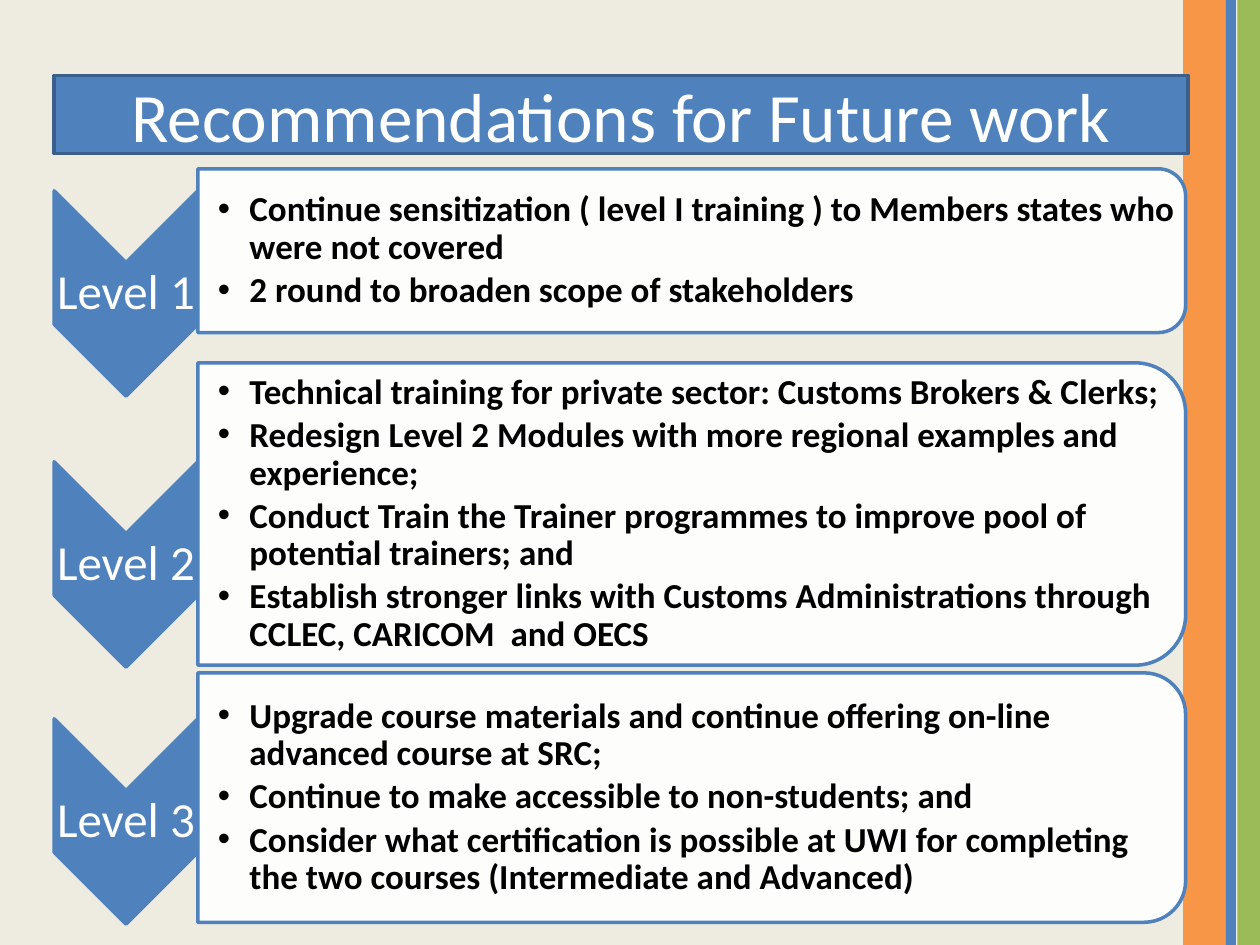
from dataclasses import dataclass

from lxml import etree
from pptx import Presentation
from pptx.dml.color import RGBColor
from pptx.enum.shapes import MSO_SHAPE
from pptx.enum.text import MSO_ANCHOR, MSO_AUTO_SIZE, PP_ALIGN
from pptx.oxml.ns import qn
from pptx.util import Inches, Pt

RECTANGLE = MSO_SHAPE.RECTANGLE
CHEVRON = MSO_SHAPE.CHEVRON
ROUND_SAME_SIDE = MSO_SHAPE.ROUND_2_SAME_RECTANGLE
MIDDLE = MSO_ANCHOR.MIDDLE
CENTER = PP_ALIGN.CENTER
NO_AUTOFIT = MSO_AUTO_SIZE.NONE

CREAM = RGBColor(0xEE, 0xEC, 0xE1)
ORANGE = RGBColor(0xF7, 0x96, 0x46)
BLUE = RGBColor(0x4F, 0x81, 0xBD)
DARK_BLUE = RGBColor(0x3A, 0x5F, 0x8C)
GREEN = RGBColor(0x9B, 0xBB, 0x59)
WHITE = RGBColor(0xFF, 0xFF, 0xFF)
BLACK = RGBColor(0, 0, 0)

FONT = "Calibri"
LEFT = 0.43
CHEVRON_WIDTH, CHEVRON_HEIGHT = 1.14, 1.63
LABEL_HEIGHT = 0.49
PANEL_LEFT, PANEL_WIDTH = 1.57, 7.84
CORNER_INSET = 0.29 / 6  # text inset of a rounded corner, per unit of panel height


@dataclass
class Stripe:
    left: float
    width: float
    color: RGBColor


@dataclass
class Level:
    name: str
    chevron_middle: float
    panel_middle: float
    panel_height: float
    points: list[str]


STRIPES = [
    Stripe(9.39, 0.35, ORANGE),
    Stripe(9.82, 0.18, GREEN),
    Stripe(9.73, 0.08, BLUE),
]

LEVELS = [
    Level("Level 1", 2.33, 1.99, 1.3, [
        "Continue sensitization ( level I training ) to Members states who were not covered",
        "2 round to broaden scope of stakeholders",
    ]),
    Level("Level 2", 4.48, 4.08, 2.4, [
        "Technical training for private sector: Customs Brokers & Clerks;",
        "Redesign Level 2 Modules with more regional examples and experience;",
        "Conduct Train the Trainer programmes to improve pool of potential trainers; and",
        "Establish stronger links with Customs Administrations through CCLEC, CARICOM  and OECS",
    ]),
    Level("Level 3", 6.52, 6.33, 1.98, [
        "Upgrade course materials and continue offering on-line advanced course at SRC;",
        "Continue to make accessible to non-students; and",
        "Consider what certification is possible at UWI for completing "
        "the two courses (Intermediate and Advanced)",
    ]),
]


def format_text(para, size: float, color: RGBColor, bold: bool = False) -> None:
    for span in para.runs:
        span.font.name = FONT
        span.font.size = Pt(size)
        span.font.bold = bold
        span.font.color.rgb = color


def add_stripe(page, stripe: Stripe) -> None:
    shape = page.shapes.add_shape(
        RECTANGLE, Inches(stripe.left), 0, Inches(stripe.width), Inches(7.5))
    shape.shadow.inherit = False
    shape.fill.solid()
    shape.fill.fore_color.rgb = stripe.color
    shape.line.fill.background()


def add_turned_shape(page, kind, left: float, middle: float,
                     width: float, height: float, fill: RGBColor):
    """Add a shape turned a quarter right; the lengths are those seen after turning."""
    shape = page.shapes.add_shape(
        kind, Inches(left + (width - height) / 2), Inches(middle - width / 2),
        Inches(height), Inches(width))
    shape.rotation = 90
    shape.shadow.inherit = False
    shape.fill.solid()
    shape.fill.fore_color.rgb = fill
    shape.line.color.rgb = BLUE
    shape.line.width = Pt(2)
    return shape


def set_opacity(shape, percent: int) -> None:
    color = shape.fill._xPr.find(f"{qn('a:solidFill')}/{qn('a:srgbClr')}")
    etree.SubElement(color, qn("a:alpha"), val=str(percent * 1000))


def add_text_box(page, left: float, middle: float, width: float, height: float,
                 left_margin: float, margin: float):
    box = page.shapes.add_textbox(
        Inches(left), Inches(middle - height / 2), Inches(width), Inches(height))
    frame = box.text_frame
    frame.word_wrap = True
    frame.vertical_anchor = MIDDLE
    frame.margin_left = Inches(left_margin)
    frame.margin_top = frame.margin_right = frame.margin_bottom = Inches(margin)
    return frame


def add_bullet(para) -> None:
    properties = para._p.get_or_add_pPr()
    properties.set("marL", str(Inches(0.25)))
    properties.set("indent", str(Inches(-0.25)))
    etree.SubElement(properties, qn("a:buFont"), typeface="Arial")
    etree.SubElement(properties, qn("a:buChar"), char="•")


def add_level(page, level: Level) -> None:
    add_turned_shape(page, CHEVRON, LEFT, level.chevron_middle,
                     CHEVRON_WIDTH, CHEVRON_HEIGHT, BLUE)
    label = add_text_box(page, LEFT, level.chevron_middle, CHEVRON_WIDTH,
                         LABEL_HEIGHT, 0.02, 0.02)
    label.text = level.name
    para = label.paragraphs[0]
    para.alignment = CENTER
    para.line_spacing = 0.9
    format_text(para, 28, WHITE)

    panel = add_turned_shape(page, ROUND_SAME_SIDE, PANEL_LEFT, level.panel_middle,
                             PANEL_WIDTH, level.panel_height, WHITE)
    set_opacity(panel, 90)
    inset = CORNER_INSET * level.panel_height
    body = add_text_box(page, PANEL_LEFT, level.panel_middle, PANEL_WIDTH - inset,
                        level.panel_height - 2 * inset, 0.16, 0.01)
    body.text = "\n".join(level.points)
    for para in body.paragraphs:
        para.level = 1
        para.line_spacing = 0.9
        para.space_after = Pt(3)
        add_bullet(para)
        format_text(para, 20, BLACK, bold=True)


def format_title(title) -> None:
    title.left, title.top = Inches(LEFT), Inches(0.6)
    title.width, title.height = Inches(9), Inches(0.62)
    title.fill.solid()
    title.fill.fore_color.rgb = BLUE
    title.line.color.rgb = DARK_BLUE
    title.line.width = Pt(2)
    frame = title.text_frame
    frame.text = "Recommendations for Future work"
    frame.auto_size = NO_AUTOFIT
    frame.vertical_anchor = MIDDLE
    frame.paragraphs[0].alignment = CENTER
    format_text(frame.paragraphs[0], 39.6, WHITE)


def main() -> None:
    deck = Presentation()
    deck.slide_width, deck.slide_height = Inches(10), Inches(7.5)
    page = deck.slides.add_slide(deck.slide_layouts[5])
    page.background.fill.solid()
    page.background.fill.fore_color.rgb = CREAM
    title = page.shapes.title
    for stripe in STRIPES:
        add_stripe(page, stripe)
    format_title(title)
    page.shapes._spTree.append(title._element)  # bring in front of the stripes
    for level in LEVELS:
        add_level(page, level)
    deck.save("out.pptx")


if __name__ == "__main__":
    main()
